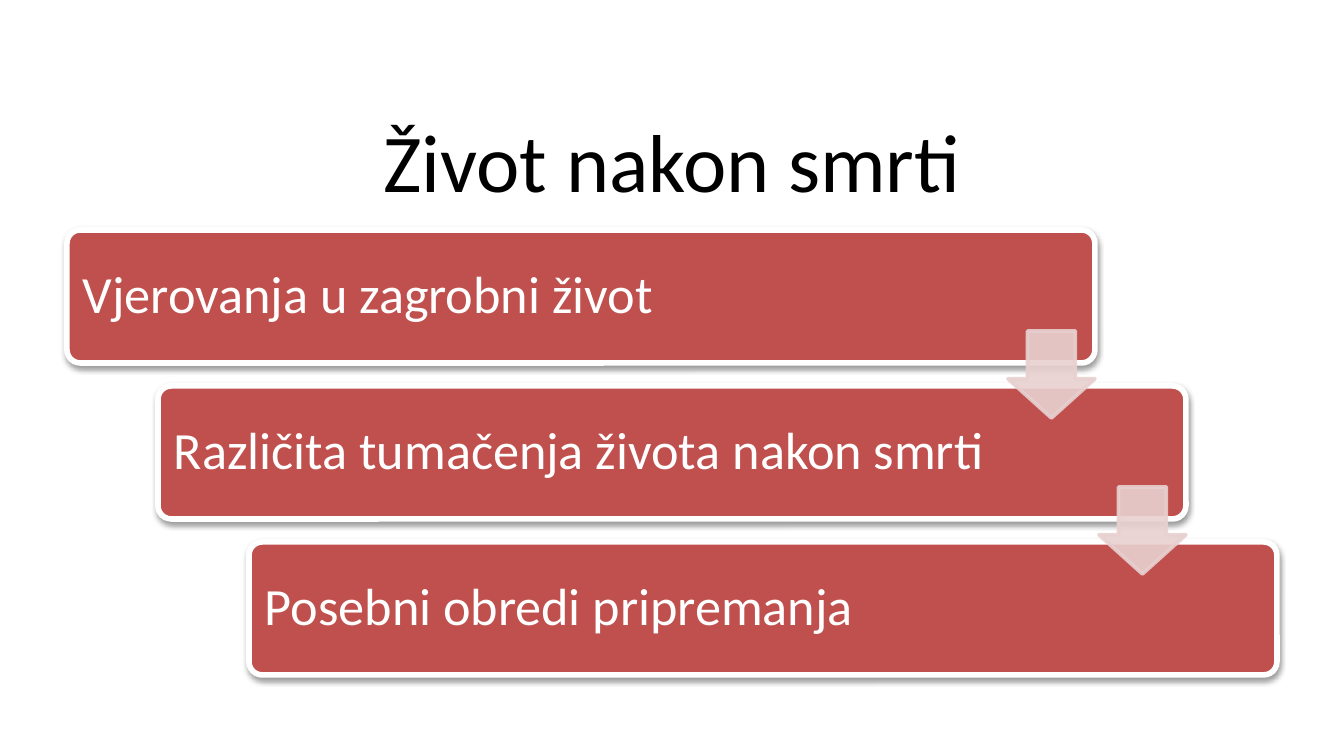
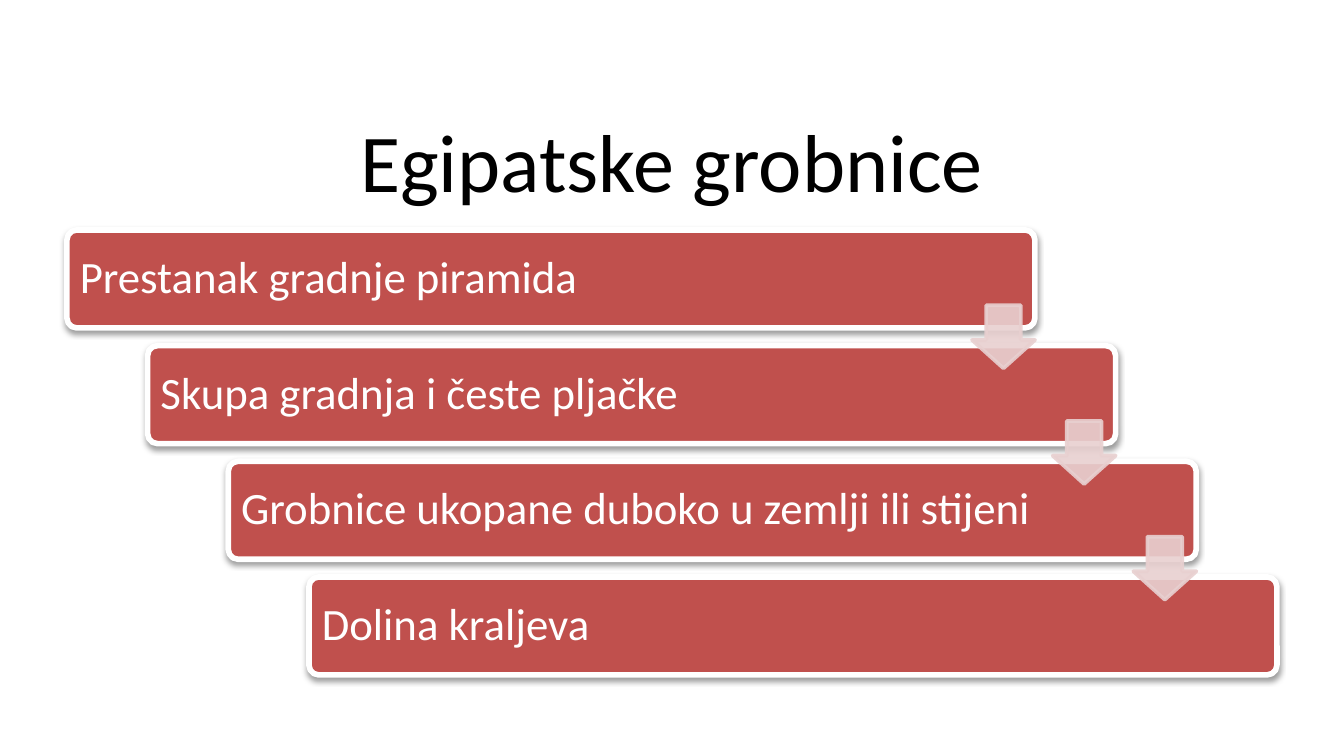
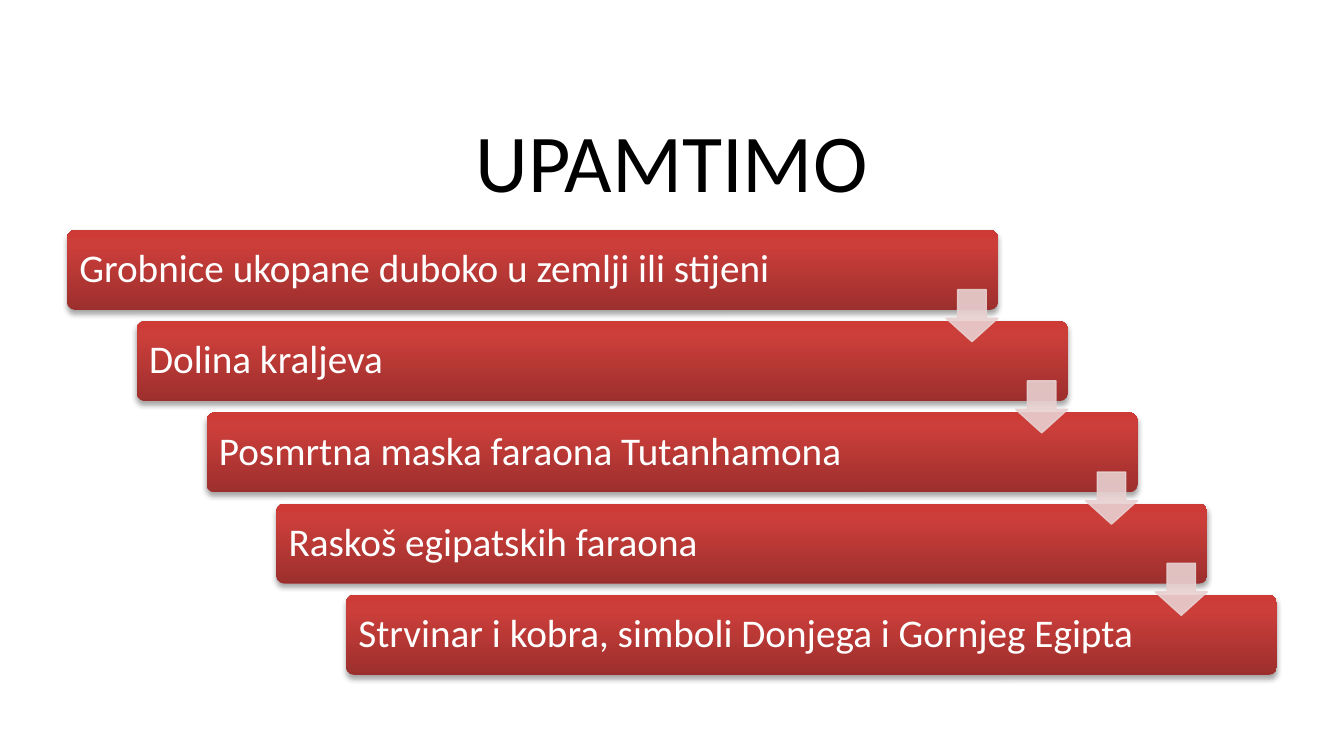
"""Build three slides that each show a title above a staircase of steps."""
from dataclasses import dataclass

from lxml.etree import SubElement
from pptx import Presentation
from pptx.dml.color import RGBColor
from pptx.enum.shapes import MSO_SHAPE as Shape
from pptx.enum.text import MSO_ANCHOR as Anchor, PP_ALIGN as Align
from pptx.oxml.ns import qn
from pptx.util import Pt

PX = 914400 / 134.4
SLIDE_SIZE = (1344, 756)
TITLE_BOX = (67, 113, 1210, 105)
STAIR_LEFT, STAIR_TOP, STAIR_WIDTH, STAIR_HEIGHT = 67, 230, 1210, 445


@dataclass(frozen=True)
class Theme:
    font: str = "Calibri"
    title_size: int = 44
    title_color: str = "000000"
    step_color: str = "FFFFFF"
    step_fill: str = "C0504D"
    step_gradient: tuple = ((0, "9C2F2D"), (80, "CB3E3A"), (100, "CE3B37"))
    step_border: int = 3
    arrow_color: str = "E8D0D0"
    arrow_alpha: int = 90
    shadow_color: str = "000000"
    shadow_blur: float = 3.1


THEME = Theme()

SLIDES = [
    {
        "title": "Život nakon smrti",
        "steps": [
            "Vjerovanja u zagrobni život",
            "Različita tumačenja života nakon smrti",
            "Posebni obredi pripremanja",
        ],
        "step_size": (1028, 133), "arrow": 87, "inset": 12, "type_size": 28,
        "glossy": False, "arrow_border": 2, "shadow": (38, 1.6),
    },
    {
        "title": "Egipatske grobnice",
        "steps": [
            "Prestanak gradnje piramida",
            "Skupa gradnja i česte pljačke",
            "Grobnice ukopane duboko u zemlji ili stijeni",
            "Dolina kraljeva",
        ],
        "step_size": (968, 98), "arrow": 63, "inset": 10, "type_size": 24,
        "glossy": False, "arrow_border": 2, "shadow": (38, 1.6),
    },
    {
        "title": "UPAMTIMO",
        "steps": [
            "Grobnice ukopane duboko u zemlji ili stijeni",
            "Dolina kraljeva",
            "Posmrtna maska faraona Tutanhamona",
            "Raskoš egipatskih faraona",
            "Strvinar i kobra, simboli Donjega i Gornjeg Egipta",
        ],
        "step_size": (931, 80), "arrow": 52, "inset": 10, "type_size": 21,
        "glossy": True, "arrow_border": 0.75, "shadow": (35, 1.8),
    },
]


def emu(*lengths):
    return [round(length * PX) for length in lengths]


def rgb(color):
    return RGBColor.from_string(color)


def write(holder, text, size, color, align):
    frame = holder.text_frame
    frame.word_wrap = True
    frame.vertical_anchor = Anchor.MIDDLE
    paragraph = frame.paragraphs[0]
    paragraph.alignment = align
    paragraph.line_spacing = 0.9
    run = paragraph.add_run()
    run.text = text
    run.font.name = THEME.font
    run.font.size = Pt(size)
    run.font.color.rgb = rgb(color)


def add_color(parent, color, alpha=100):
    node = SubElement(parent, qn("a:srgbClr"), val=color)
    if alpha < 100:
        SubElement(node, qn("a:alpha"), val=str(alpha * 1000))


def fill_glossy(step):
    gradient = SubElement(step._element.spPr, qn("a:gradFill"), rotWithShape="1")
    stops = SubElement(gradient, qn("a:gsLst"))
    for position, color in THEME.step_gradient:
        add_color(SubElement(stops, qn("a:gs"), pos=str(position * 1000)), color)
    SubElement(gradient, qn("a:lin"), ang=str(270 * 60000), scaled="0")
    step.line.fill.background()


def fill_flat(shape, color, border_color, border):
    shape.fill.solid()
    shape.fill.fore_color.rgb = rgb(color)
    shape.line.color.rgb = rgb(border_color)
    shape.line.width = Pt(border)


def add_shadow(step, alpha, distance):
    effects = step._element.spPr.find(qn("a:effectLst"))
    shadow = SubElement(
        effects, qn("a:outerShdw"), blurRad=str(Pt(THEME.shadow_blur)),
        dist=str(Pt(distance)), dir=str(90 * 60000), rotWithShape="0")
    add_color(shadow, THEME.shadow_color, alpha)


def add_step(slide, text, left, top, content):
    step = slide.shapes.add_shape(
        Shape.ROUNDED_RECTANGLE, *emu(left, top, *content["step_size"]))
    step.adjustments[0] = 0.1
    if content["glossy"]:
        fill_glossy(step)
    else:
        fill_flat(step, THEME.step_fill, THEME.step_color, THEME.step_border)
    step.shadow.inherit = False
    add_shadow(step, *content["shadow"])
    frame = step.text_frame
    inset, = emu(content["inset"])
    frame.margin_left = frame.margin_right = inset
    frame.margin_top = frame.margin_bottom = inset
    write(step, text, content["type_size"], THEME.step_color, Align.LEFT)


def add_arrow(slide, left, top, content):
    arrow = slide.shapes.add_shape(
        Shape.DOWN_ARROW, *emu(left, top, content["arrow"], content["arrow"]))
    arrow.adjustments[0] = 0.55
    arrow.adjustments[1] = 0.45
    fill_flat(arrow, THEME.arrow_color, THEME.arrow_color, content["arrow_border"])
    arrow.shadow.inherit = False
    for color in arrow._element.spPr.iter(qn("a:srgbClr")):
        SubElement(color, qn("a:alpha"), val=str(THEME.arrow_alpha * 1000))


def add_stairs(slide, content):
    steps, arrow = content["steps"], content["arrow"]
    width, height = content["step_size"]
    shift = (STAIR_WIDTH - width) / (len(steps) - 1)
    drop = (STAIR_HEIGHT - height) / (len(steps) - 1)
    corners = [(STAIR_LEFT + i * shift, STAIR_TOP + i * drop)
               for i in range(len(steps))]
    for text, (left, top) in zip(steps, corners):
        add_step(slide, text, left, top, content)
    for left, top in corners[:-1]:
        gap_middle = top + (height + drop) / 2
        add_arrow(slide, left + width - arrow, gap_middle - arrow / 2, content)


def main():
    deck = Presentation()
    deck.slide_width, deck.slide_height = emu(*SLIDE_SIZE)
    for content in SLIDES:
        slide = deck.slides.add_slide(deck.slide_layouts[6])
        title = slide.shapes.add_textbox(*emu(*TITLE_BOX))
        write(title, content["title"], THEME.title_size, THEME.title_color,
              Align.CENTER)
        add_stairs(slide, content)
    deck.save("out.pptx")


if __name__ == "__main__":
    main()
